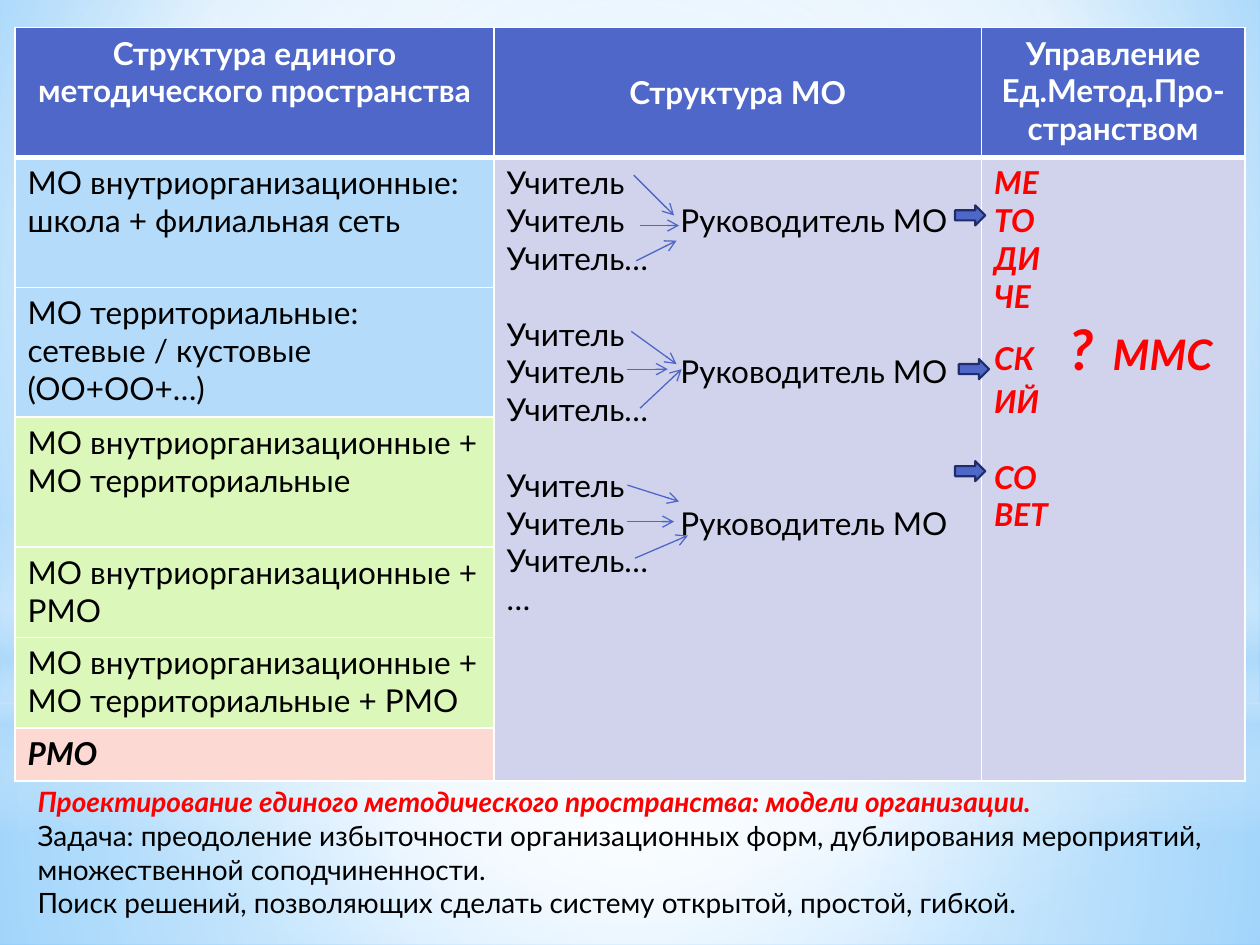
from lxml.etree import SubElement
from pptx import Presentation
from pptx.dml.color import RGBColor
from pptx.enum.shapes import MSO_CONNECTOR as CONN, MSO_SHAPE as SHAPE
from pptx.enum.text import MSO_ANCHOR as ANCHOR, PP_ALIGN as ALIGN
from pptx.oxml.ns import qn
from pptx.util import Inches, Pt

BLUE, NAVY, RED, WHITE, BLACK = "4E67C8", "1F2E69", "FF0000", "FFFFFF", "000000"
SKY, LIME, PINK, LAVENDER = "B4DCFA", "DCF7BA", "FCD9D3", "D0D3EB"
LINE = 21.6

BACKGROUND = [("9ED5FF", 0, 100), (WHITE, 60, 100), ("5BB9FF", 100, 100)]
GLOWS = [
    (SHAPE.RECTANGLE, 5.58, 1.92, True,
     [(WHITE, 0, 91), (WHITE, 37, 76), (SKY, 100, 79)]),
    (SHAPE.RECTANGLE, 0, 5.58, True,
     [(WHITE, 0, 89), (WHITE, 48, 62), (SKY, 100, 79)]),
    (SHAPE.RECTANGLE, 4.12, 2.5, False,
     [(WHITE, 0, 0), (WHITE, 29, 30), (SKY, 45, 40), (WHITE, 55, 26),
      (SKY, 65, 60), (WHITE, 100, 0)]),
    (SHAPE.OVAL, 1.75, 5.58, True, [(WHITE, 0, 100), (WHITE, 56, 0)]),
]
COLUMNS = [3.8, 3.87, 2.09]
ROWS = [1.03, 1.03, 1.03, 1.03, 0.72, 0.72, 0.42]
HEADERS = ["Структура единого методического пространства", "Структура МО",
           "Управление Ед.Метод.Про-странством"]
MODELS = [
    (["МО внутриорганизационные: школа + филиальная сеть"], SKY, False),
    (["МО территориальные:", "сетевые / кустовые (ОО+ОО+…)"], SKY, False),
    (["МО внутриорганизационные + МО территориальные"], LIME, False),
    (["МО внутриорганизационные + РМО"], LIME, False),
    (["МО внутриорганизационные + МО территориальные + РМО"], LIME, False),
    (["РМО"], PINK, True),
]
TEAM = ["Учитель", "Учитель\tРуководитель МО", "Учитель…"]
COUNCIL = ["МЕ", "ТО", "ДИ", "ЧЕ", "СК", "ИЙ", "СО", "ВЕТ"]
TEAM_ARROWS = [
    (5.03, 1.39, 5.35, 1.71), (5.08, 1.79, 5.39, 1.79), (5.05, 2.07, 5.37, 1.91),
    (5.01, 2.63, 5.37, 2.89), (4.98, 2.93, 5.3, 2.93), (5.08, 3.24, 5.41, 2.93),
    (4.98, 3.85, 5.39, 3.98), (4.98, 4.14, 5.35, 4.14), (5.04, 4.43, 5.46, 4.25),
]
BLOCK_ARROWS = [(7.58, 1.63), (7.61, 2.85), (7.58, 3.66)]
GOAL = "Проектирование единого методического пространства: модели организации."
TASKS = [
    "Задача: преодоление избыточности организационных форм, дублирования мероприятий,",
    "множественной соподчиненности.",
    "Поиск решений, позволяющих сделать систему открытой, простой, гибкой.",
]


def rgb(color):
    return RGBColor.from_string(color)


def add_run(p, text, size=18, color=BLACK, bold=False, italic=False):
    r = p.add_run()
    r.text = text
    r.font.name, r.font.size = "Lato", Pt(size)
    r.font.bold, r.font.italic = bold, italic
    r.font.color.rgb = rgb(color)


def add_line(tf, text, before=0, align=ALIGN.LEFT, tabs=(), **fmt):
    p = tf.paragraphs[0]
    if p.runs:
        p = tf.add_paragraph()
    p.alignment = align
    if before:
        p.space_before = Pt(before)
    if tabs:
        tab_list = SubElement(p._p.get_or_add_pPr(), qn("a:tabLst"))
        for tab in tabs:
            SubElement(tab_list, qn("a:tab"), pos=str(Inches(tab)), algn="l")
    add_run(p, text, **fmt)
    return p


def set_gradient(fill, props, stops, focus=None):
    fill.solid()
    solid = props.find(qn("a:solidFill"))
    grad = solid.makeelement(qn("a:gradFill"), {"rotWithShape": "1"})
    props.replace(solid, grad)
    stop_list = SubElement(grad, qn("a:gsLst"))
    for color, position, opacity in stops:
        gs = SubElement(stop_list, qn("a:gs"), pos=str(position * 1000))
        clr = SubElement(gs, qn("a:srgbClr"), val=color)
        if opacity < 100:
            SubElement(clr, qn("a:alpha"), val=str(opacity * 1000))
    if focus:
        radial = SubElement(grad, qn("a:path"), {"path": "circle"})
        sides = {side: str(v * 1000) for side, v in zip("ltrb", focus)}
        SubElement(radial, qn("a:fillToRect"), sides)
    else:
        SubElement(grad, qn("a:lin"), ang="5400000", scaled="0")


def set_cell(cell, color, header=False):
    tc_pr = cell._tc.get_or_add_tcPr()
    for side in "LRTB":
        width = 3 if header and side == "B" else 1
        ln = SubElement(tc_pr, qn(f"a:ln{side}"), w=str(Pt(width)))
        SubElement(SubElement(ln, qn("a:solidFill")), qn("a:srgbClr"), val=WHITE)
    cell.fill.solid()
    cell.fill.fore_color.rgb = rgb(color)
    return cell.text_frame


def add_backdrop(slide):
    bg = slide.background.fill
    bg.solid()
    set_gradient(bg, slide._element.xpath(".//p:bgPr")[0], BACKGROUND, (20, 10, 20, 60))
    for kind, top, height, radial, stops in GLOWS:
        sp = slide.shapes.add_shape(kind, 0, Inches(top), Inches(10), Inches(height))
        sp.shadow.inherit = False
        sp.line.fill.background()
        set_gradient(sp.fill, sp._element.spPr, stops, (50,) * 4 if radial else None)


def add_structure_table(slide):
    table = slide.shapes.add_table(
        len(ROWS), len(COLUMNS), Inches(0.12), Inches(0.22),
        Inches(sum(COLUMNS)), Inches(sum(ROWS))).table
    for column, width in zip(table.columns, COLUMNS):
        column.width = Inches(width)
    for row, height in zip(table.rows, ROWS):
        row.height = Inches(height)
    for i, text in enumerate(HEADERS):
        tf = set_cell(table.cell(0, i), BLUE, header=True)
        add_line(tf, text, align=ALIGN.CENTER, color=WHITE, bold=True)
    table.cell(0, 1).vertical_anchor = ANCHOR.MIDDLE
    for i, (lines, color, strong) in enumerate(MODELS, 1):
        tf = set_cell(table.cell(i, 0), color)
        for text in lines:
            add_line(tf, text, bold=strong, italic=strong)
    for i in (1, 2):
        for row in range(1, len(ROWS)):
            set_cell(table.cell(row, i), LAVENDER)
        table.cell(1, i).merge(table.cell(len(ROWS) - 1, i))

    tf = table.cell(1, 1).text_frame
    for group in range(3):
        for i, text in enumerate(TEAM):
            add_line(tf, text, before=LINE if group and i == 0 else 0, tabs=[1.38])
    add_line(tf, "…")

    tf = table.cell(1, 2).text_frame
    accent = dict(color=RED, bold=True, italic=True)
    for text in COUNCIL:
        p = add_line(tf, text, before=LINE if text == "СО" else 0,
                     tabs=[0.6, 0.94] if text == "СК" else (), **accent)
        if text == "СК":
            add_run(p, "\t?", size=32, **accent)
            add_run(p, "\tММС", size=24, **accent)


def add_arrows(slide):
    for ends in TEAM_ARROWS:
        cx = slide.shapes.add_connector(CONN.STRAIGHT, *map(Inches, ends))
        cx.line.color.rgb = rgb(BLUE)
        cx.line.width = Pt(0.75)
        SubElement(cx.line._get_or_add_ln(), qn("a:tailEnd"), type="arrow")
        SubElement(cx._element.spPr, qn("a:effectLst"))
    for left, top in BLOCK_ARROWS:
        sp = slide.shapes.add_shape(SHAPE.RIGHT_ARROW, Inches(left), Inches(top),
                                    Inches(0.24), Inches(0.16))
        sp.shadow.inherit = False
        sp.fill.solid()
        sp.fill.fore_color.rgb = rgb(BLUE)
        sp.line.color.rgb = rgb(NAVY)
        sp.line.width = Pt(1.25)


def add_summary(slide):
    tf = slide.shapes.add_textbox(Inches(0.2), Inches(6.18), Inches(9.68),
                                  Inches(1.18)).text_frame
    tf.word_wrap = False
    add_line(tf, GOAL, size=16, color=RED, bold=True, italic=True)
    for text in TASKS:
        add_line(tf, text, size=16)


def main():
    prs = Presentation()
    prs.slide_width, prs.slide_height = Inches(10), Inches(7.5)
    slide = prs.slides.add_slide(prs.slide_layouts[6])
    add_backdrop(slide)
    add_structure_table(slide)
    add_arrows(slide)
    add_summary(slide)
    prs.save("out.pptx")


if __name__ == "__main__":
    main()
